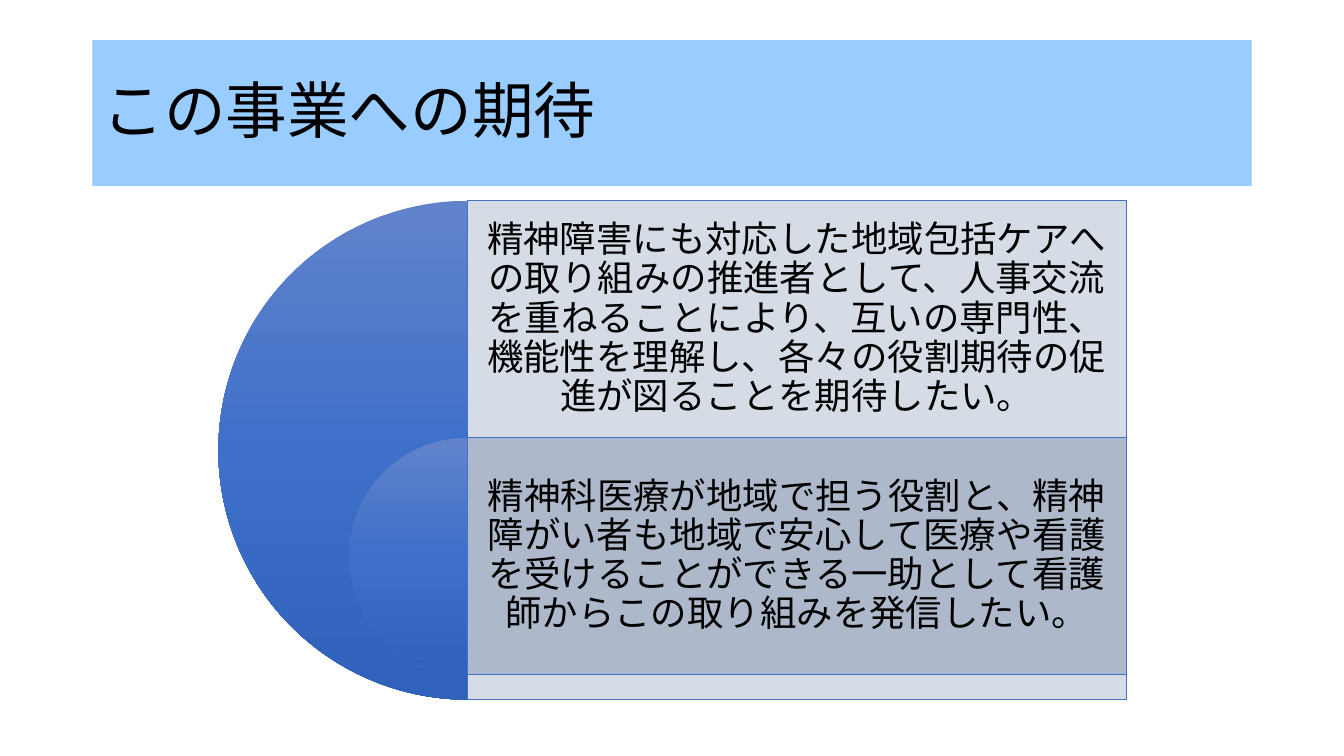
from copy import deepcopy

from lxml import etree
from pptx import Presentation
from pptx.dml.color import RGBColor
from pptx.enum.lang import MSO_LANGUAGE_ID
from pptx.enum.shapes import MSO_SHAPE
from pptx.enum.text import MSO_ANCHOR, MSO_AUTO_SIZE, PP_ALIGN
from pptx.oxml.ns import qn
from pptx.util import Cm, Pt

RECTANGLE, PIE = MSO_SHAPE.RECTANGLE, MSO_SHAPE.PIE
LEFT, CENTER = PP_ALIGN.LEFT, PP_ALIGN.CENTER
MIDDLE = MSO_ANCHOR.MIDDLE
NO_AUTOFIT = MSO_AUTO_SIZE.NONE
JAPANESE = MSO_LANGUAGE_ID.JAPANESE

FONT = "Noto Sans CJK JP"
GRADIENT = ((0, "6183CB"), (0.5, "3E70CA"), (1, "3062BB"))

# Diagram measures in centimetres
AXIS = 11.79
TOP = 5.06
PANEL_WIDTH = 16.59
TEXT_HEIGHT = 5.97
INSET = 0.28

# Diameter, panel colour and text of each nested level
LEVELS = (
    (12.57, "D6DCE5",
     "精神障害にも対応した地域包括ケアへの取り組みの推進者として、人事交流を重ねることにより、"
     "互いの専門性、機能性を理解し、各々の役割期待の促進が図ることを期待したい。"),
    (5.97, "ADB9CA",
     "精神科医療が地域で担う役割と、精神障がい者も地域で安心して医療や看護を受けることができる"
     "一助として看護師からこの取り組みを発信したい。"),
)


def color(value):
    return RGBColor.from_string(value)


def write_text(frame, text, size, align, inset=None):
    frame.word_wrap = True
    frame.auto_size = NO_AUTOFIT
    frame.vertical_anchor = MIDDLE
    if inset is not None:
        frame.margin_left = frame.margin_right = Cm(inset)
        frame.margin_top = frame.margin_bottom = Cm(inset)
    para = frame.paragraphs[0]
    para.alignment = align
    para.line_spacing = 0.9
    span = para.add_run()
    span.text = text
    span.font.size = Pt(size)
    span.font.name = FONT
    span.font.language_id = JAPANESE
    span.font.color.rgb = color("000000")
    # East Asian characters need their own typeface entry
    etree.SubElement(span.font._element, qn("a:ea"), typeface=FONT)


def add_title(page, text):
    title = page.shapes.title
    title.left, title.top = Cm(2.33), Cm(1.01)
    title.width, title.height = Cm(29.21), Cm(3.68)
    title.fill.solid()
    title.fill.fore_color.rgb = color("99CCFF")
    write_text(title.text_frame, text, size=44, align=LEFT)


def add_half_disc(page, top, diameter):
    disc = page.shapes.add_shape(
        PIE, Cm(AXIS - diameter / 2), Cm(top), Cm(diameter), Cm(diameter))
    disc.shadow.inherit = False
    disc.line.fill.background()
    disc.adjustments[0], disc.adjustments[1] = 54, 162
    # Vertical gradient with a third stop
    disc.fill.gradient()
    disc.fill.gradient_angle = 270
    stop_list = disc._element.spPr.find(".//" + qn("a:gsLst"))
    stop_list.append(deepcopy(stop_list[-1]))
    for stop, (position, value) in zip(disc.fill.gradient_stops, GRADIENT):
        stop.position = position
        stop.color.rgb = color(value)


def add_panel(page, top, height, fill):
    panel = page.shapes.add_shape(
        RECTANGLE, Cm(AXIS), Cm(top), Cm(PANEL_WIDTH), Cm(height))
    panel.shadow.inherit = False
    panel.fill.solid()
    panel.fill.fore_color.rgb = color(fill)
    panel.line.color.rgb = color("4472C4")
    panel.line.width = Pt(0.5)


def add_statement(page, top, text):
    box = page.shapes.add_textbox(
        Cm(AXIS), Cm(top), Cm(PANEL_WIDTH), Cm(TEXT_HEIGHT))
    write_text(box.text_frame, text, size=26, align=CENTER, inset=INSET)


def main():
    deck = Presentation()
    deck.slide_width, deck.slide_height = Cm(33.87), Cm(19.05)
    page = deck.slides.add_slide(deck.slide_layouts[5])
    add_title(page, "この事業への期待")

    # Nested half discs with their panels
    for index, (diameter, fill, text) in enumerate(LEVELS):
        top = TOP + index * TEXT_HEIGHT
        add_half_disc(page, top, diameter)
        add_panel(page, top, diameter, fill)
        add_statement(page, top, text)

    deck.save("out.pptx")


if __name__ == "__main__":
    main()
